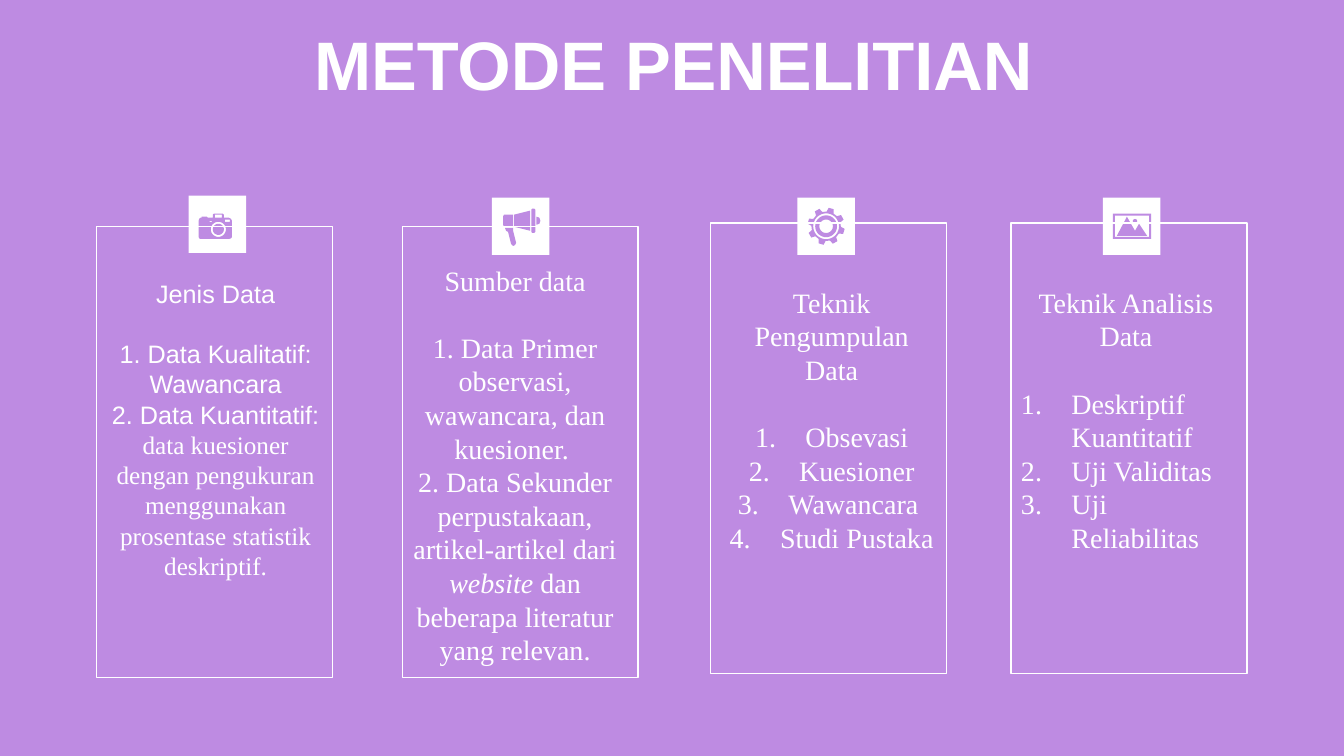
from dataclasses import dataclass
from math import cos, radians, sin

from lxml import etree
from pptx import Presentation
from pptx.dml.color import RGBColor
from pptx.enum.shapes import MSO_SHAPE
from pptx.enum.text import MSO_ANCHOR, PP_ALIGN
from pptx.oxml.ns import qn
from pptx.util import Inches, Pt

RECT = MSO_SHAPE.RECTANGLE
MIDDLE = MSO_ANCHOR.MIDDLE
CENTER, LEFT = PP_ALIGN.CENTER, PP_ALIGN.LEFT
SLIDE_W, SLIDE_H = Inches(13.33), Inches(7.5)
BADGE_UNITS = 57  # icons are drawn on a 57 by 57 grid inside the badge

Point = tuple[float, float]
Contour = list[Point]


@dataclass(frozen=True)
class Theme:
    purple: RGBColor = RGBColor(0xBE, 0x8B, 0xE2)
    white: RGBColor = RGBColor(0xFF, 0xFF, 0xFF)
    sans: str = "Arial"
    serif: str = "Times New Roman"
    title_size: Pt = Pt(49)
    small: int = 18
    large: int = 20
    outline: Pt = Pt(1)


THEME = Theme()


@dataclass(frozen=True)
class Box:
    """Left, top, width and height as percentages of the slide."""
    x: float
    y: float
    w: float
    h: float

    def emu(self) -> tuple[int, int, int, int]:
        return (round(self.x * SLIDE_W / 100), round(self.y * SLIDE_H / 100),
                round(self.w * SLIDE_W / 100), round(self.h * SLIDE_H / 100))


@dataclass(frozen=True)
class Line:
    """One paragraph; every second piece is italic."""
    pieces: tuple[str, ...]
    font: str = THEME.serif
    numbered: bool = False
    align: PP_ALIGN = CENTER


@dataclass(frozen=True)
class Card:
    frame: Point
    badge: Point
    text: Box
    size: int
    icon: list[Contour]
    lines: list[Line]


def disc(cx: float, cy: float, r: float) -> Contour:
    return [(cx + r * cos(radians(a)), cy + r * sin(radians(a))) for a in range(0, 360, 10)]


def block(left: float, top: float, right: float, bottom: float) -> Contour:
    return [(left, top), (right, top), (right, bottom), (left, bottom)]


def cog(cx: float, cy: float, root: float, tip: float, teeth: int) -> Contour:
    corners = ((-14, root), (-8, tip), (8, tip), (14, root))
    angles = [(radians(16 + 360 * i / teeth + a), r) for i in range(teeth) for a, r in corners]
    return [(cx + r * cos(a), cy + r * sin(a)) for a, r in angles]


CAMERA = [
    [(25, 18), (34, 18), (35, 19), (35, 22), (40, 22), (42, 23), (43, 25), (43, 41),
     (42, 42.5), (40, 43), (12, 43), (10.5, 42.5), (10, 41), (10, 25), (10.5, 23), (12, 22),
     (13, 22), (13, 21), (18, 21), (19, 22), (24, 22), (24, 19)],
    block(26, 19, 33, 22), block(21, 25, 23, 26), block(36, 24, 41, 26),
    disc(29.5, 33.5, 7.5), disc(29.5, 33.5, 5.5),
]
MEGAPHONE = [
    [(21, 30), (21, 33), (24, 45), (23, 47), (21, 48), (19, 46), (16, 34), (14, 33), (13, 30)],
    [(44, 19), (47, 20), (48, 23), (47, 26), (44, 27)],
    [(12, 17), (21, 17), (21, 29), (12, 29), (11, 27), (11, 19)],
    [(38, 13), (38, 33), (22, 29), (22, 17)],
    [(40, 11), (42, 11), (43, 12), (43, 34), (42, 35), (40, 35), (39, 34), (39, 12)],
]
GEAR = [cog(28.5, 28.5, 14.6, 18.5, 8)] + [disc(28.5, 28.5, r) for r in (12.8, 10.8, 6.7)]
LANDSCAPE = [
    block(10, 16, 48, 41), block(12, 18, 46, 39), disc(32, 23.5, 2.2),
    [(24, 19), (32, 33), (36, 26), (44, 38), (14, 38)],
]

TITLE = Box(2.63, 4.13, 94.95, 10.53)
FRAME_W, FRAME_H = 17.55, 59.6
BADGE_W, BADGE_H = 4.28, 7.6
TEXT_W = 17.1

CARDS = [
    Card((7.2, 30), (14.03, 25.87), Box(7.5, 36.13, TEXT_W, 51.33), THEME.small, CAMERA, [
        Line(("Jenis Data",), THEME.sans),
        Line(("1. Data Kualitatif: Wawancara",), THEME.sans),
        Line(("2. Data Kuantitatif:",), THEME.sans),
        Line(("data kuesioner dengan pengukuran menggunakan prosentase statistik deskriptif.",)),
    ]),
    Card((29.93, 30), (36.6, 26.13), Box(29.78, 34.13, TEXT_W, 57.33), THEME.large, MEGAPHONE, [
        Line(("Sumber data",)),
        Line(("1. Data Primer",)),
        Line(("observasi, wawancara, dan kuesioner. ",)),
        Line(("2. Data Sekunder",)),
        Line(("perpustakaan, artikel-artikel dari ", "website",
              " dan beberapa literatur yang relevan.")),
    ]),
    Card((52.88, 29.5), (59.33, 26.13), Box(53.33, 37.07, TEXT_W, 48.4), THEME.large, GEAR, [
        Line(("Teknik Pengumpulan Data",)),
        *(Line((t,), numbered=True)
          for t in ("Obsevasi", "Kuesioner", "Wawancara ", "Studi Pustaka")),
    ]),
    Card((75.23, 29.5), (82.05, 26.13), Box(75.23, 37.07, TEXT_W, 43.6), THEME.large, LANDSCAPE, [
        Line(("Teknik Analisis Data",)),
        *(Line((t,), numbered=True, align=LEFT)
          for t in ("Deskriptif Kuantitatif", "Uji Validitas", "Uji Reliabilitas")),
    ]),
]


def add_badge(s, card: Card) -> None:
    sp = s.shapes.add_shape(RECT, *Box(*card.badge, BADGE_W, BADGE_H).emu())
    sp.shadow.inherit = False
    sp.fill.solid()
    sp.fill.fore_color.rgb = THEME.white
    sp.line.fill.background()


def add_icon(s, card: Card) -> None:
    """Draw all contours as one outline, so that inner ones cut holes."""
    left, top, width, _ = Box(*card.badge, BADGE_W, BADGE_H).emu()
    unit = width / BADGE_UNITS
    contours = [[(round(x * unit), round(y * unit)) for x, y in c] for c in card.icon]
    builder = s.shapes.build_freeform(*contours[0][0])
    for i, (start, *rest) in enumerate(contours):
        if i:
            builder.move_to(*start)
        builder.add_line_segments(rest, close=True)
    sp = builder.convert_to_shape(left, top)
    sp.shadow.inherit = False
    sp.fill.solid()
    sp.fill.fore_color.rgb = THEME.purple
    sp.line.fill.background()


def add_frame(s, card: Card) -> None:
    sp = s.shapes.add_shape(RECT, *Box(*card.frame, FRAME_W, FRAME_H).emu())
    sp.shadow.inherit = False
    sp.fill.background()
    sp.line.color.rgb = THEME.white
    sp.line.width = THEME.outline


def number(p) -> None:
    """Give the paragraph an automatic number and a hanging indent."""
    pPr = p._p.get_or_add_pPr()
    pPr.set("marL", str(Inches(0.5)))
    pPr.set("indent", str(-Inches(0.5)))
    etree.SubElement(pPr, qn("a:buFont"), typeface="+mj-lt")
    etree.SubElement(pPr, qn("a:buAutoNum"), type="arabicPeriod")


def add_text(s, card: Card) -> None:
    tf = s.shapes.add_textbox(*card.text.emu()).text_frame
    tf.word_wrap = True
    for i, line in enumerate(card.lines):
        p = tf.add_paragraph() if i else tf.paragraphs[0]
        p.alignment = line.align
        if i == 0:
            p.space_after = Pt(card.size * 1.2)
        if line.numbered:
            number(p)
        for j, piece in enumerate(line.pieces):
            r = p.add_run()
            r.text = piece
            r.font.name, r.font.size = line.font, Pt(card.size)
            r.font.color.rgb = THEME.white
            if j % 2:
                r.font.italic = True


def add_title(s) -> None:
    tf = s.shapes.add_textbox(*TITLE.emu()).text_frame
    tf.word_wrap = True
    tf.vertical_anchor = MIDDLE
    tf.text = "METODE PENELITIAN"
    p = tf.paragraphs[0]
    p.alignment, p.line_spacing, p.space_before = CENTER, 0.8, Pt(10)
    font = p.runs[0].font
    font.name, font.size, font.bold = THEME.sans, THEME.title_size, True
    font.color.rgb = THEME.white


def main() -> None:
    prs = Presentation()
    prs.slide_width, prs.slide_height = SLIDE_W, SLIDE_H
    s = prs.slides.add_slide(prs.slide_layouts[6])
    s.background.fill.solid()
    s.background.fill.fore_color.rgb = THEME.purple
    add_title(s)
    for draw in (add_badge, add_icon, add_frame, add_text):
        for card in CARDS:
            draw(s, card)
    prs.save("out.pptx")


if __name__ == "__main__":
    main()
